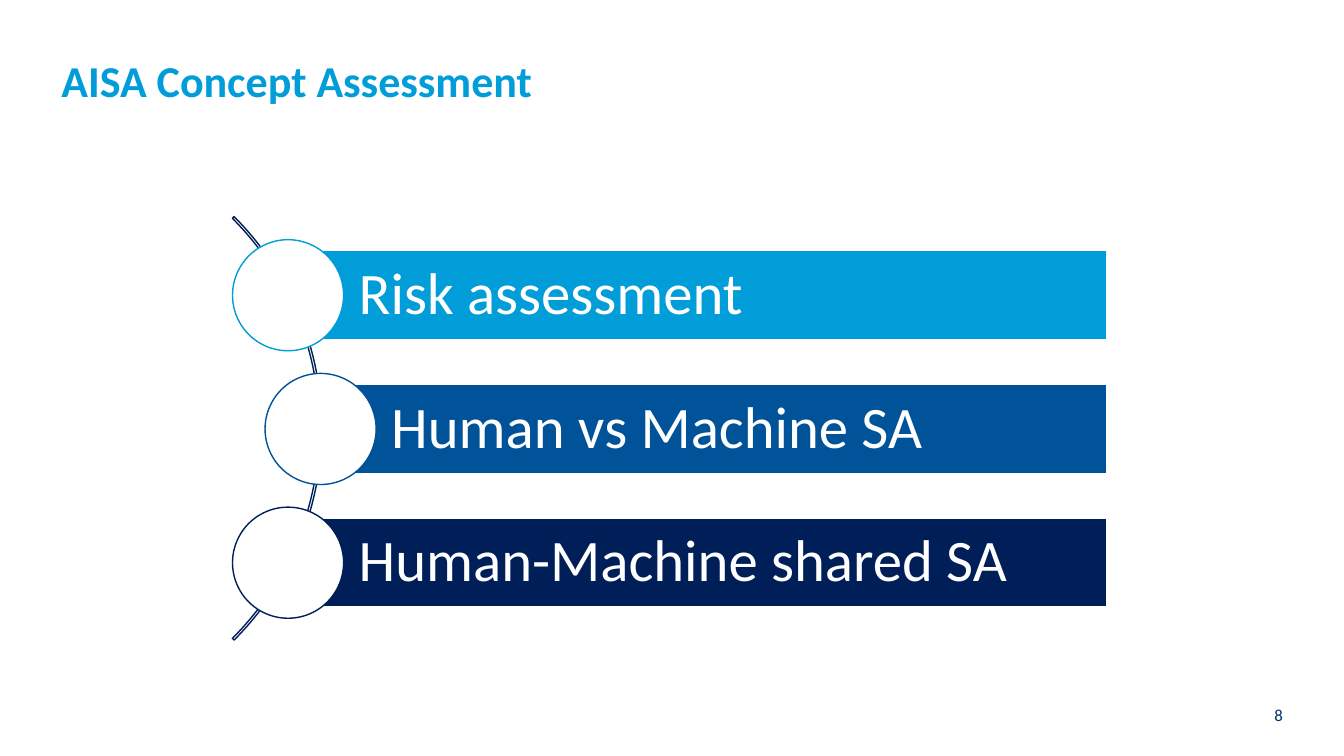
from pptx import Presentation
from pptx.dml.color import RGBColor
from pptx.enum.shapes import MSO_SHAPE as SHAPE
from pptx.enum.text import MSO_ANCHOR as ANCHOR, PP_ALIGN as ALIGN
from pptx.util import Cm, Pt

CYAN, BLUE, NAVY, WHITE = "009DD9", "005299", "001F59", "FFFFFF"


def add_shape(kind, x, y, w, h, line, fill=None):
    sp = s.shapes.add_shape(kind, Cm(x), Cm(y), Cm(w), Cm(h))
    sp.shadow.inherit = False
    if fill:
        sp.fill.solid()
        sp.fill.fore_color.rgb = RGBColor.from_string(fill)
    else:
        sp.fill.background()
    sp.line.color.rgb = RGBColor.from_string(line)
    sp.line.width = Pt(1)
    return sp


def set_text(sp, text, size, color, bold=False, align=ALIGN.LEFT,
             anchor=ANCHOR.TOP, spacing=1.0, left=0, inset=0):
    tf = sp.text_frame
    tf.word_wrap = True
    tf.vertical_anchor = anchor
    tf.margin_left = Cm(left)
    tf.margin_top = tf.margin_right = tf.margin_bottom = Cm(inset)
    p = tf.paragraphs[0]
    p.alignment = align
    p.line_spacing = spacing
    r = p.add_run()
    r.text = text
    r.font.name = "Calibri"
    r.font.size = Pt(size)
    r.font.bold = bold
    r.font.color.rgb = RGBColor.from_string(color)


prs = Presentation()
prs.slide_width, prs.slide_height = Cm(33.87), Cm(19.05)
s = prs.slides.add_slide(prs.slide_layouts[6])

# Title
title = s.shapes.add_textbox(Cm(1.55), Cm(1.5), Cm(19.53), Cm(1.14))
set_text(title, "AISA Concept Assessment", 31.5, CYAN, bold=True, spacing=0.9)

# Thin arc behind the circles, from 315 to 45 degrees
arc = add_shape(SHAPE.BLOCK_ARC, -6.98, 3.25, 15.09, 15.09, NAVY)
for i, value in enumerate((189, 27, 0.004)):
    arc.adjustments[i] = value

# Bars, each with a circle centred on its left edge
TOP, STEP, BAR_H, RIGHT, CIRCLE = 6.32, 3.37, 2.24, 27.89, 2.8
bars = [
    ("Risk assessment", 7.26, CYAN),
    ("Human vs Machine SA", 8.08, BLUE),
    ("Human-Machine shared SA", 7.26, NAVY),
]
for i, (label, x, color) in enumerate(bars):
    y = TOP + i * STEP
    bar = add_shape(SHAPE.RECTANGLE, x, y, RIGHT - x, BAR_H, WHITE, color)
    set_text(bar, label, 42, WHITE, anchor=ANCHOR.MIDDLE, spacing=0.9,
             left=1.78, inset=0.3)
    add_shape(SHAPE.OVAL, x - CIRCLE / 2, y + (BAR_H - CIRCLE) / 2,
              CIRCLE, CIRCLE, color, WHITE)

# Slide number
number = s.shapes.add_textbox(Cm(24.71), Cm(17.75), Cm(7.62), Cm(0.66))
set_text(number, "8", 12, "002F6E", align=ALIGN.RIGHT)

prs.save("out.pptx")
